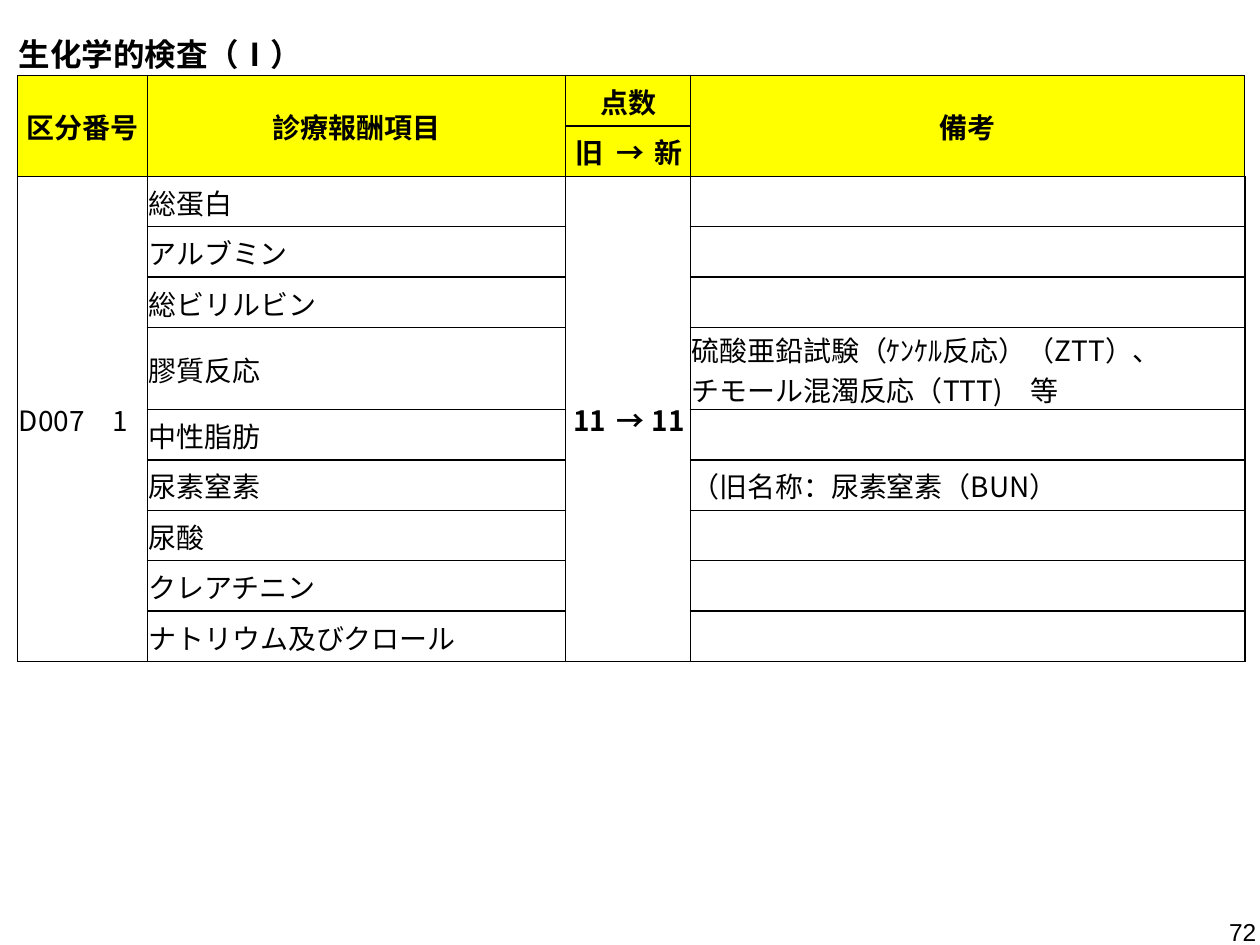
from lxml.etree import SubElement
from pptx import Presentation
from pptx.dml.color import RGBColor
from pptx.enum.text import MSO_ANCHOR as Anchor, PP_ALIGN as Align
from pptx.oxml.ns import qn
from pptx.util import Pt

COLORS = {"text": "000000", "line": "000000", "header": "FFFF00"}
FONT = "Noto Sans CJK JP"
COLUMN_WIDTHS = [74.16, 239.04, 27.36, 18.72, 25.2, 316.8]
TITLE_HEIGHT, ROW_HEIGHT = 41.04, 28.8
ITEMS = [
    ("総蛋白", ""),
    ("アルブミン", ""),
    ("総ビリルビン", ""),
    ("膠質反応", "硫酸亜鉛試験（ｹﾝｹﾙ反応）（ZTT）、\nチモール混濁反応（TTT)　等"),
    ("中性脂肪", ""),
    ("尿素窒素", "（旧名称：尿素窒素（BUN）"),
    ("尿酸", ""),
    ("クレアチニン", ""),
    ("ナトリウム及びクロール", ""),
]
HEADER_ROW, FIRST_ITEM_ROW = 1, 3
LAST_ROW = FIRST_ITEM_ROW + len(ITEMS) - 1
LAST_COLUMN = len(COLUMN_WIDTHS) - 1


def style_paragraph(paragraph, size, font, bold=False, align=Align.LEFT):
    paragraph.alignment = align
    paragraph.font.size = Pt(size)
    paragraph.font.bold = bold
    paragraph.font.name = font
    paragraph.font.color.rgb = RGBColor.from_string(COLORS["text"])
    properties = paragraph._p.pPr.find(qn("a:defRPr"))
    SubElement(properties, qn("a:ea"), typeface=font)


def set_borders(cell, widths):
    """Draw the sides named in widths (L, R, T, B) and clear the others."""
    properties = cell._tc.get_or_add_tcPr()
    for index, side in enumerate("LRTB"):
        line = SubElement(properties, qn(f"a:ln{side}"), w=str(Pt(widths.get(side, 0))))
        if side in widths:
            fill = SubElement(line, qn("a:solidFill"))
            SubElement(fill, qn("a:srgbClr"), val=COLORS["line"])
        else:
            SubElement(line, qn("a:noFill"))
        properties.insert(index, line)


def fill_region(table, text, top, left, bottom=None, right=None, *, size=16, bold=False,
                align=Align.LEFT, anchor=Anchor.MIDDLE, color=None, borders="LRTB"):
    """Merge the region if it spans cells, then set its text, fill and borders."""
    bottom = top if bottom is None else bottom
    right = left if right is None else right
    origin = table.cell(top, left)
    if (top, left) != (bottom, right):
        origin.merge(table.cell(bottom, right))
    origin.text = text
    origin.vertical_anchor = anchor
    origin.margin_left = origin.margin_right = origin.margin_top = Pt(0.72)
    origin.margin_bottom = Pt(0)
    for paragraph in origin.text_frame.paragraphs:
        style_paragraph(paragraph, size, FONT, bold, align)

    side_width = 0.5 if color else 1
    widths = {side: side_width if side in "LR" else 1 for side in borders}
    for row in range(top, bottom + 1):
        for column in range(left, right + 1):
            cell = table.cell(row, column)
            if color:
                cell.fill.solid()
                cell.fill.fore_color.rgb = RGBColor.from_string(color)
            else:
                cell.fill.background()
            outer = {"L": column == left, "R": column == right,
                     "T": row == top, "B": row == bottom}
            set_borders(cell, {side: width for side, width in widths.items()
                               if outer[side] or cell.is_merge_origin})


def add_header(table):
    style = {"bold": True, "align": Align.CENTER, "color": COLORS["header"]}
    second_row = HEADER_ROW + 1
    for column, text in ((0, "区分番号"), (1, "診療報酬項目"), (LAST_COLUMN, "備考")):
        fill_region(table, text, HEADER_ROW, column, second_row, **style)
    fill_region(table, "点数", HEADER_ROW, 2, right=4, **style)
    for column, (text, borders) in enumerate((("旧", "LTB"), ("→", "TB"), ("新", "RTB")), 2):
        fill_region(table, text, second_row, column, borders=borders, **style)


def add_items(table):
    fill_region(table, "D007　1", FIRST_ITEM_ROW, 0, LAST_ROW)
    for column, (text, borders) in enumerate((("11", "LTB"), ("→", "TB"), ("11", "RTB")), 2):
        fill_region(table, text, FIRST_ITEM_ROW, column, LAST_ROW,
                    bold=True, align=Align.CENTER, borders=borders)
    for row, (item, note) in enumerate(ITEMS, FIRST_ITEM_ROW):
        fill_region(table, item, row, 1)
        fill_region(table, note, row, LAST_COLUMN)


def add_fee_table(slide):
    row_heights = [TITLE_HEIGHT] + [ROW_HEIGHT] * LAST_ROW
    table = slide.shapes.add_table(
        len(row_heights), len(COLUMN_WIDTHS), Pt(10.08), Pt(2.16),
        Pt(sum(COLUMN_WIDTHS)), Pt(sum(row_heights))).table
    table.first_row = table.horz_banding = False
    for column, width in zip(table.columns, COLUMN_WIDTHS):
        column.width = Pt(width)
    for row, height in zip(table.rows, row_heights):
        row.height = Pt(height)
    fill_region(table, "生化学的検査（Ⅰ）", 0, 0, right=LAST_COLUMN, size=18, bold=True,
                anchor=Anchor.BOTTOM, borders="B")
    add_header(table)
    add_items(table)


def add_page_number(slide, number):
    box = slide.shapes.add_textbox(Pt(557.28), Pt(520.56), Pt(167.76), Pt(37.44))
    box.text_frame.word_wrap = True
    box.text_frame.text = number
    style_paragraph(box.text_frame.paragraphs[0], 14, "Arial", align=Align.RIGHT)


def main():
    presentation = Presentation()
    presentation.slide_width, presentation.slide_height = Pt(720), Pt(540)
    slide = presentation.slides.add_slide(presentation.slide_layouts[6])
    add_fee_table(slide)
    add_page_number(slide, "72")
    presentation.save("out.pptx")


if __name__ == "__main__":
    main()
